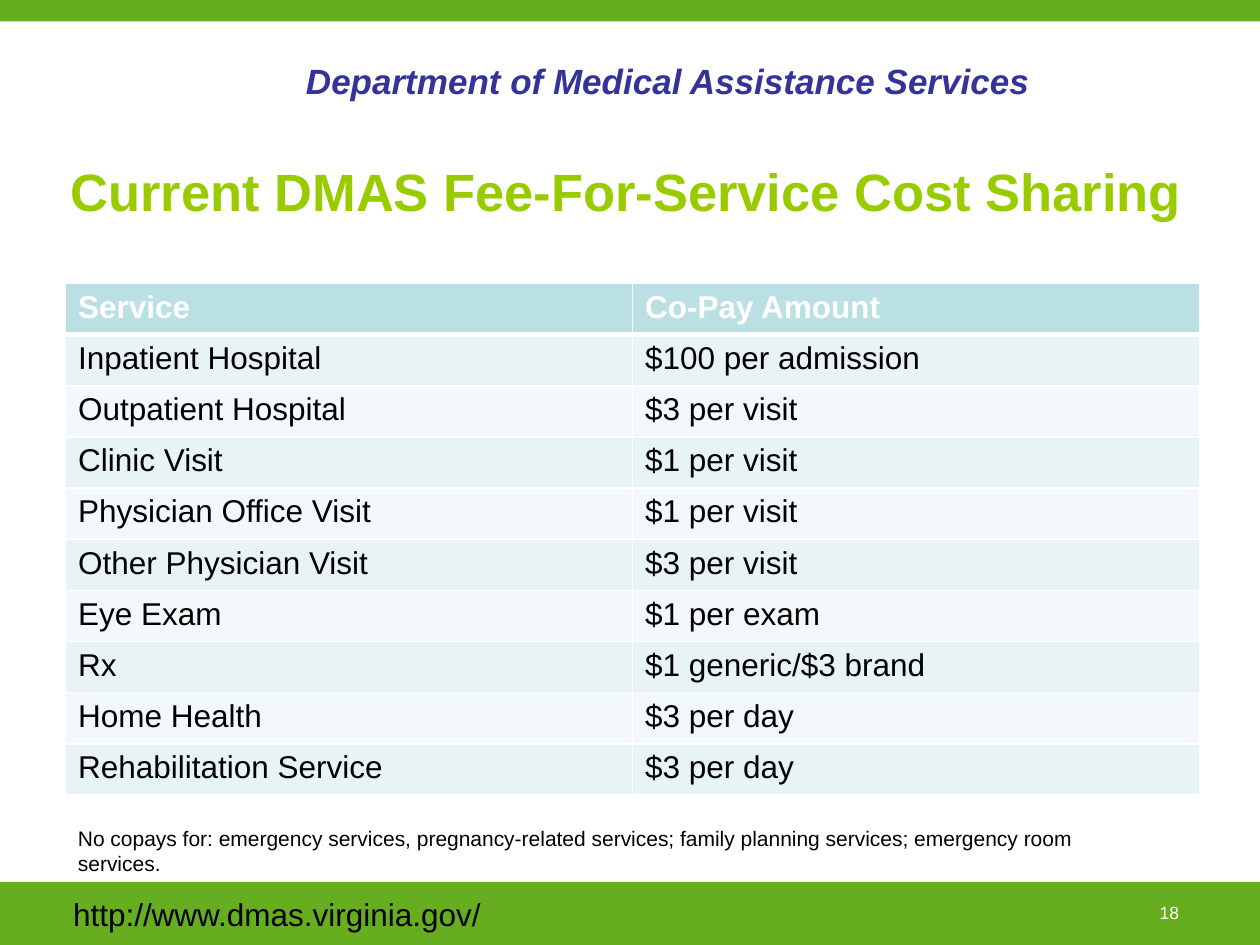
from dataclasses import dataclass
from typing import Any

import lxml.etree
import pptx
import pptx.dml.color
import pptx.enum.shapes
import pptx.enum.text
import pptx.oxml.ns
import pptx.util

ALIGN = pptx.enum.text.PP_ALIGN
MID = pptx.enum.text.MSO_ANCHOR.MIDDLE
TOP = pptx.enum.text.MSO_ANCHOR.TOP
UNIT = pptx.util.Inches(0.1)  # the slide is a grid of 100 columns by 75 rows


@dataclass(frozen=True)
class Theme:
    font: str = "Arial"
    green: str = "66AE20"
    lime: str = "99CC00"
    navy: str = "333399"
    head: str = "BBE0E3"
    bands: tuple[str, str] = ("E7F3F4", "F3F9FA")
    white: str = "FFFFFF"
    black: str = "000000"
    title: int = 30
    agency: int = 20
    text: int = 18
    note: int = 12
    page: int = 10
    thin: int = 1
    thick: int = 3


@dataclass(frozen=True)
class Box:
    col: float
    row: float
    wide: float
    high: float

    def place(self) -> tuple[int, ...]:
        return tuple(round(n * UNIT) for n in (self.col, self.row, self.wide, self.high))


@dataclass(frozen=True)
class Style:
    size: int
    color: str
    bold: bool = False
    slant: bool = False


@dataclass(frozen=True)
class Label:
    box: Box
    text: str
    style: Style
    align: Any = ALIGN.LEFT
    anchor: Any = TOP
    pad: float = 1  # side inset in columns


THEME = Theme()
BARS = (Box(0, 70, 100, 5), Box(0, 0, 100, 1.7))
LABELS = (
    Label(Box(91.7, 71.5, 2.2, 1.9), "18", Style(THEME.page, THEME.white),
          ALIGN.CENTER, MID, 0),
    Label(Box(23.3, 4.2, 60.8, 4.4), "Department of Medical Assistance Services",
          Style(THEME.agency, THEME.navy, True, True)),
    Label(Box(5.2, 65, 87.5, 5),
          "No copays for: emergency services, pregnancy-related services; "
          "family planning services; emergency room services.",
          Style(THEME.note, THEME.black)),
)
GRID = Box(5.2, 22.5, 90, 40.6)
FEES = (
    ("Service", "Co-Pay Amount"),
    ("Inpatient Hospital", "$100 per admission"),
    ("Outpatient Hospital", "$3 per visit"),
    ("Clinic Visit", "$1 per visit"),
    ("Physician Office Visit", "$1 per visit"),
    ("Other Physician Visit", "$3 per visit"),
    ("Eye Exam", "$1 per exam"),
    ("Rx", "$1 generic/$3 brand"),
    ("Home Health", "$3 per day"),
    ("Rehabilitation Service", "$3 per day"),
)


def rgb(code: str) -> Any:
    return pptx.dml.color.RGBColor.from_string(code)


def write(frame: Any, text: str, style: Style, align: Any = ALIGN.LEFT) -> None:
    para = frame.paragraphs[0]
    para.alignment = align
    run = para.add_run()
    run.text = text
    font = run.font
    font.name, font.size = THEME.font, pptx.util.Pt(style.size)
    font.bold, font.italic = style.bold, style.slant
    font.color.rgb = rgb(style.color)


def add_bar(slide: Any, box: Box) -> Any:
    bar = slide.shapes.add_shape(pptx.enum.shapes.MSO_SHAPE.RECTANGLE, *box.place())
    bar.shadow.inherit = False
    bar.fill.solid()
    bar.fill.fore_color.rgb = rgb(THEME.green)
    bar.line.fill.background()
    return bar


def add_label(slide: Any, label: Label) -> None:
    frame = slide.shapes.add_textbox(*label.box.place()).text_frame
    frame.word_wrap = True
    frame.margin_left = frame.margin_right = round(label.pad * UNIT)
    frame.margin_top = frame.margin_bottom = round(label.pad * UNIT / 2)
    frame.vertical_anchor = label.anchor
    write(frame, label.text, label.style, label.align)


def add_edge(cell: Any, side: str, width: int) -> None:
    name = pptx.oxml.ns.qn
    props = cell._tc.get_or_add_tcPr()
    line = lxml.etree.SubElement(props, name(f"a:ln{side}"), w=str(pptx.util.Pt(width)))
    fill = lxml.etree.SubElement(line, name("a:solidFill"))
    lxml.etree.SubElement(fill, name("a:srgbClr"), val=THEME.white)


def add_fees(slide: Any) -> None:
    table = slide.shapes.add_table(len(FEES), len(FEES[0]), *GRID.place()).table
    for r, fee in enumerate(FEES):
        top = r == 0
        shade = THEME.head if top else THEME.bands[(r - 1) % 2]
        style = Style(THEME.text, THEME.white if top else THEME.black, top)
        for c, text in enumerate(fee):
            cell = table.cell(r, c)
            # Borders come before the fill; a thick rule closes the header
            for side in "LRTB":
                rule = (r, side) in ((0, "B"), (1, "T"))
                add_edge(cell, side, THEME.thick if rule else THEME.thin)
            cell.fill.solid()
            cell.fill.fore_color.rgb = rgb(shade)
            write(cell.text_frame, text, style)


def main() -> None:
    deck = pptx.Presentation()
    deck.slide_width, deck.slide_height = 100 * UNIT, 75 * UNIT
    slide = deck.slides.add_slide(deck.slide_layouts[5])

    # Green bars, with the web address in the lower one
    foot, _ = [add_bar(slide, box) for box in BARS]
    frame = foot.text_frame
    frame.margin_left = round(5.8 * UNIT)
    frame.vertical_anchor = MID
    write(frame, "http://www.dmas.virginia.gov/", Style(THEME.text, THEME.black))

    # Title
    title = slide.shapes.title
    title.left, title.top, title.width, title.height = Box(4.2, 10.8, 91, 8.7).place()
    title.text_frame.vertical_anchor = MID
    write(title.text_frame, "Current DMAS Fee-For-Service Cost Sharing",
          Style(THEME.title, THEME.lime, True), ALIGN.CENTER)

    # Page number, agency name, note and fee table
    for label in LABELS:
        add_label(slide, label)
    add_fees(slide)
    deck.save("out.pptx")


if __name__ == "__main__":
    main()
